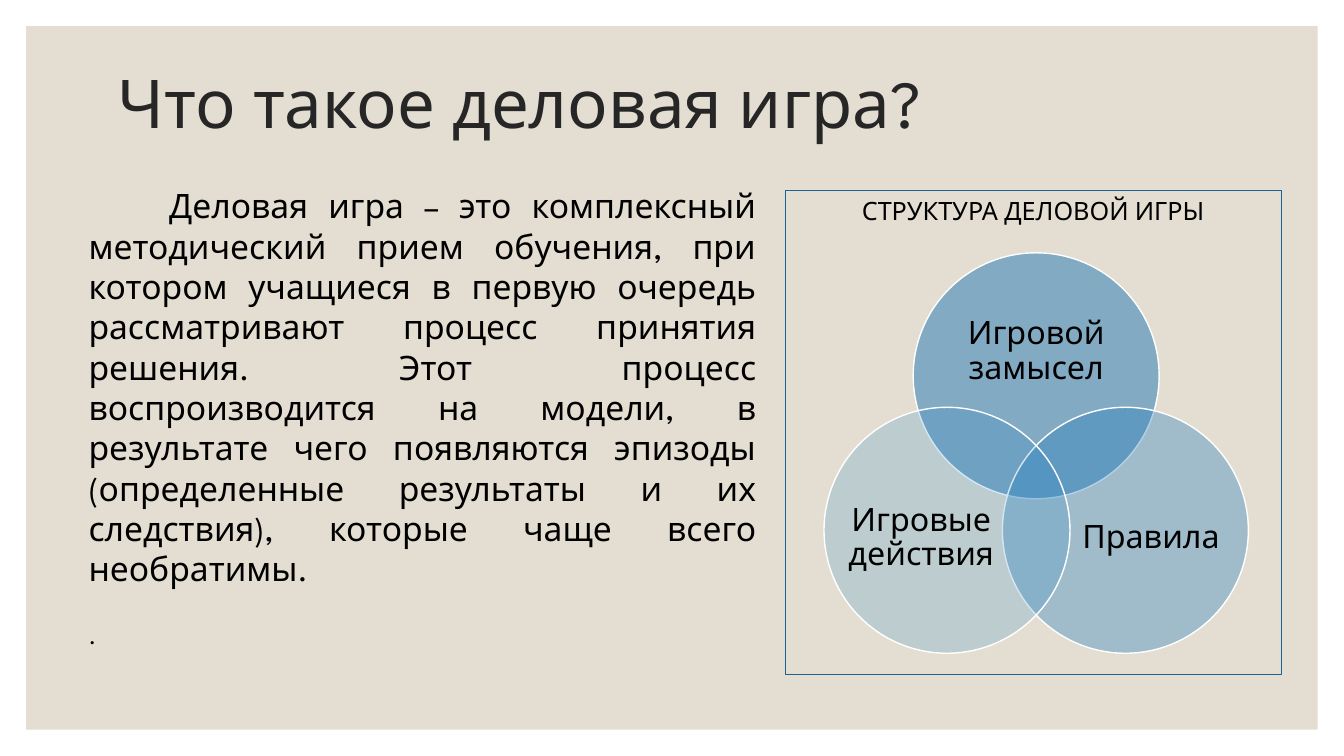
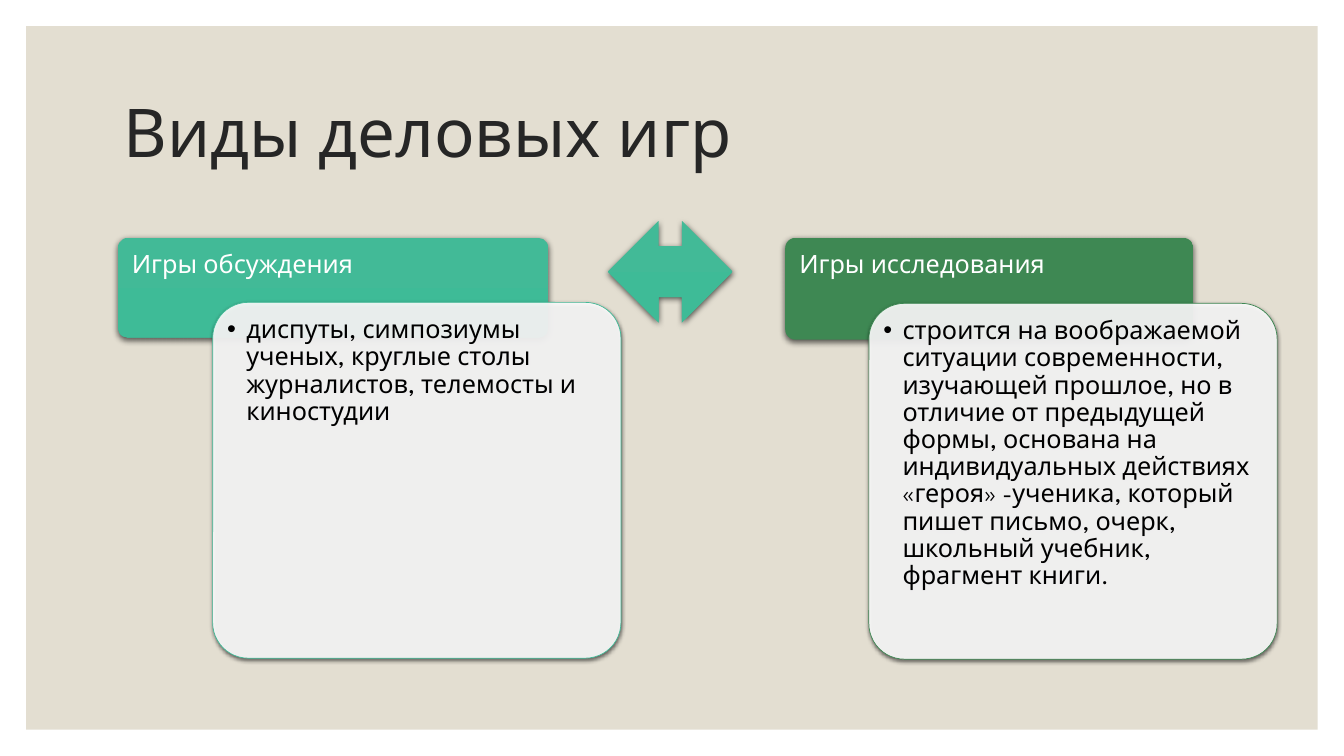
from math import cos, radians, sin

from lxml.etree import SubElement
from pptx import Presentation
from pptx.dml.color import RGBColor
from pptx.enum.shapes import MSO_SHAPE
from pptx.enum.text import MSO_ANCHOR, PP_ALIGN
from pptx.oxml.ns import qn
from pptx.util import Emu, Inches, Pt

# Square grid: 80 columns by 45 rows on a 13.33 x 7.5 inch slide
COLS, ROWS = 80, 45
UNIT = Inches(7.5) / ROWS
MARGIN = 1.56

FONT = "League Spartan"
SAND = RGBColor(0xE3, 0xDE, 0xD1)
INK = RGBColor(0x26, 0x26, 0x26)
BLACK = RGBColor(0x00, 0x00, 0x00)
WHITE = RGBColor(0xFF, 0xFF, 0xFF)
FRAME_BLUE = RGBColor(0x1D, 0x62, 0x94)
VENN_TOP = RGBColor(0x22, 0x77, 0xB4)
VENN_RIGHT = RGBColor(0x25, 0x7D, 0xBD)
VENN_LEFT = RGBColor(0x27, 0x84, 0xC6)
# Gradients, from top to bottom
TEAL = [RGBColor(0x42, 0xBA, 0x97), RGBColor(0x3E, 0xBB, 0x97)]
GREEN = [RGBColor(0x3E, 0x88, 0x53), RGBColor(0x3C, 0x89, 0x51)]


def grid(*lengths):
    """Turn grid units into slide lengths."""
    return [Emu(round(n * UNIT)) for n in lengths]


# Text helpers
def write(p, text, size, color=BLACK, align=PP_ALIGN.LEFT, spacing=1.0):
    p.text = text
    p.alignment = align
    p.line_spacing = spacing
    for r in p.runs:
        r.font.name = FONT
        r.font.size = Pt(size)
        r.font.color.rgb = color


def set_frame(sp, anchor=MSO_ANCHOR.TOP, inset=None):
    tf = sp.text_frame
    tf.word_wrap = True
    tf.vertical_anchor = anchor
    if inset is not None:
        tf.margin_left = tf.margin_right = Inches(inset)
        tf.margin_top = tf.margin_bottom = Inches(inset)
    return tf


def indent(p, left, first, bullet=None):
    pPr = p._p.get_or_add_pPr()
    pPr.set("marL", str(Inches(left)))
    pPr.set("indent", str(Inches(first)))
    if bullet:
        SubElement(pPr, qn("a:buFont")).set("typeface", "Arial")
        SubElement(pPr, qn("a:buChar")).set("char", bullet)


def add_text(s, box, anchor=MSO_ANCHOR.TOP, inset=None):
    return set_frame(s.shapes.add_textbox(*grid(*box)), anchor, inset)


# Shape helpers
def add_shape(s, kind, box, fill=None, opacity=100, line=None, width=1):
    sp = s.shapes.add_shape(kind, *grid(*box))
    sp.shadow.inherit = False
    if fill is None:
        sp.fill.background()
    elif isinstance(fill, list):
        sp.fill.gradient()
        sp.fill.gradient_angle = 270
        for stop, color in zip(sp.fill.gradient_stops, fill):
            stop.color.rgb = color
    else:
        sp.fill.solid()
        sp.fill.fore_color.rgb = fill
        if opacity < 100:
            clr = sp.element.spPr.find(qn("a:solidFill")).find(qn("a:srgbClr"))
            SubElement(clr, qn("a:alpha")).set("val", str(opacity * 1000))
    if line is None:
        sp.line.fill.background()
    else:
        sp.line.color.rgb = line
        sp.line.width = Pt(width)
    return sp


def add_shadow(sp, blur, dist):
    effects = sp.element.spPr.find(qn("a:effectLst"))
    shadow = SubElement(effects, qn("a:outerShdw"), blurRad=str(Pt(blur)),
                        dist=str(Pt(dist)), dir="5400000", rotWithShape="0")
    clr = SubElement(shadow, qn("a:srgbClr"), val="000000")
    SubElement(clr, qn("a:alpha"), val="63000")


def add_slide(prs, title, left, top):
    s = prs.slides.add_slide(prs.slide_layouts[6])
    panel = (MARGIN, MARGIN, COLS - 2 * MARGIN, ROWS - 2 * MARGIN)
    add_shape(s, MSO_SHAPE.RECTANGLE, panel, SAND)
    tf = add_text(s, (left, top, 66, 9), MSO_ANCHOR.MIDDLE)
    write(tf.paragraphs[0], title, 48, INK, spacing=0.9)
    return s


# Slide parts
def add_definition(s, text):
    tf = add_text(s, (3.48, 10.74, 42.12, 30))
    p = tf.paragraphs[0]
    write(p, text, 24, align=PP_ALIGN.JUSTIFY)
    indent(p, 0.2, 0.8)
    p = tf.add_paragraph()
    write(p, ".", 18)
    indent(p, 0.2, 0)
    p.space_before = Pt(22)


def add_venn(s, heading, sets):
    frame = add_shape(s, MSO_SHAPE.RECTANGLE, (46.74, 11.34, 29.52, 28.8),
                      line=FRAME_BLUE, width=0.75)
    write(set_frame(frame).paragraphs[0], heading, 18, align=PP_ALIGN.CENTER)
    center_x, center_y, reach, size = 61.68, 28.5, 6.13, 14.64
    for text, angle, color, opacity, (dx, dy), (w, h) in sets:
        x = center_x + reach * cos(radians(angle))
        y = center_y + reach * sin(radians(angle))
        add_shape(s, MSO_SHAPE.OVAL, (x - size / 2, y - size / 2, size, size),
                  color, opacity, WHITE)
        label = (x + dx - w / 2, y + dy - h / 2, w, h)
        tf = add_text(s, label, MSO_ANCHOR.MIDDLE, 0)
        write(tf.paragraphs[0], text, 23, align=PP_ALIGN.CENTER, spacing=0.9)


def add_game_type(s, heading, text, colors, header_box, card_box):
    header = add_shape(s, MSO_SHAPE.ROUNDED_RECTANGLE, header_box, colors)
    card = add_shape(s, MSO_SHAPE.ROUNDED_RECTANGLE, card_box, WHITE, 90,
                     colors[0], 0.5)
    header.adjustments[0] = card.adjustments[0] = 0.1
    add_shadow(header, 4.5, 1.5)
    add_shadow(card, 3, 1)
    # Rounded corners add to the insets
    write(set_frame(header, inset=0.11).paragraphs[0], heading, 18, WHITE,
          spacing=0.9)
    p = set_frame(card, inset=0.04).paragraphs[0]
    write(p, text, 18, spacing=0.9)
    indent(p, 0.19, -0.19, "•")


def main():
    prs = Presentation()
    prs.slide_width, prs.slide_height = grid(COLS, ROWS)

    # Definition and structure
    s = add_slide(prs, "Что такое деловая игра?", 6.42, 1.86)
    add_definition(
        s, "Деловая игра – это комплексный методический прием обучения, при "
        "котором учащиеся в первую очередь рассматривают процесс принятия "
        "решения. Этот процесс воспроизводится на модели, в результате чего "
        "появляются эпизоды (определенные результаты и их следствия), "
        "которые чаще всего необратимы.")
    side = (8.82, 8.04)
    add_venn(s, "СТРУКТУРА ДЕЛОВОЙ ИГРЫ", [
        ("Игровой замысел", -90, VENN_TOP, 50, (0, -1.42), (10.74, 6.6)),
        ("Правила", 30, VENN_RIGHT, 35, (1.53, 0.47), side),
        ("Игровые действия", 150, VENN_LEFT, 20, (-1.53, 0.47), side),
    ])

    # Two kinds of games
    s = add_slide(prs, "Виды деловых игр", 6.78, 3.6)
    add_game_type(
        s, "Игры обсуждения",
        "диспуты, симпозиумы ученых, круглые столы журналистов, телемосты "
        "и киностудии",
        TEAL, (7.02, 14.16, 25.62, 5.94), (12.66, 18, 24.3, 21.18))
    arrow = add_shape(s, MSO_SHAPE.LEFT_RIGHT_ARROW,
                      (36.18, 13.14, 7.44, 6.06), TEAL)
    add_shadow(arrow, 4.5, 1.5)
    add_game_type(
        s, "Игры исследования",
        "строится на воображаемой ситуации современности, изучающей прошлое, "
        "но в отличие от предыдущей формы, основана на индивидуальных "
        "действиях «героя» -ученика, который пишет письмо, очерк, школьный "
        "учебник, фрагмент книги.",
        GREEN, (46.74, 14.16, 24.3, 6.06), (51.72, 18.06, 24.3, 21.18))

    prs.save("out.pptx")


if __name__ == "__main__":
    main()
